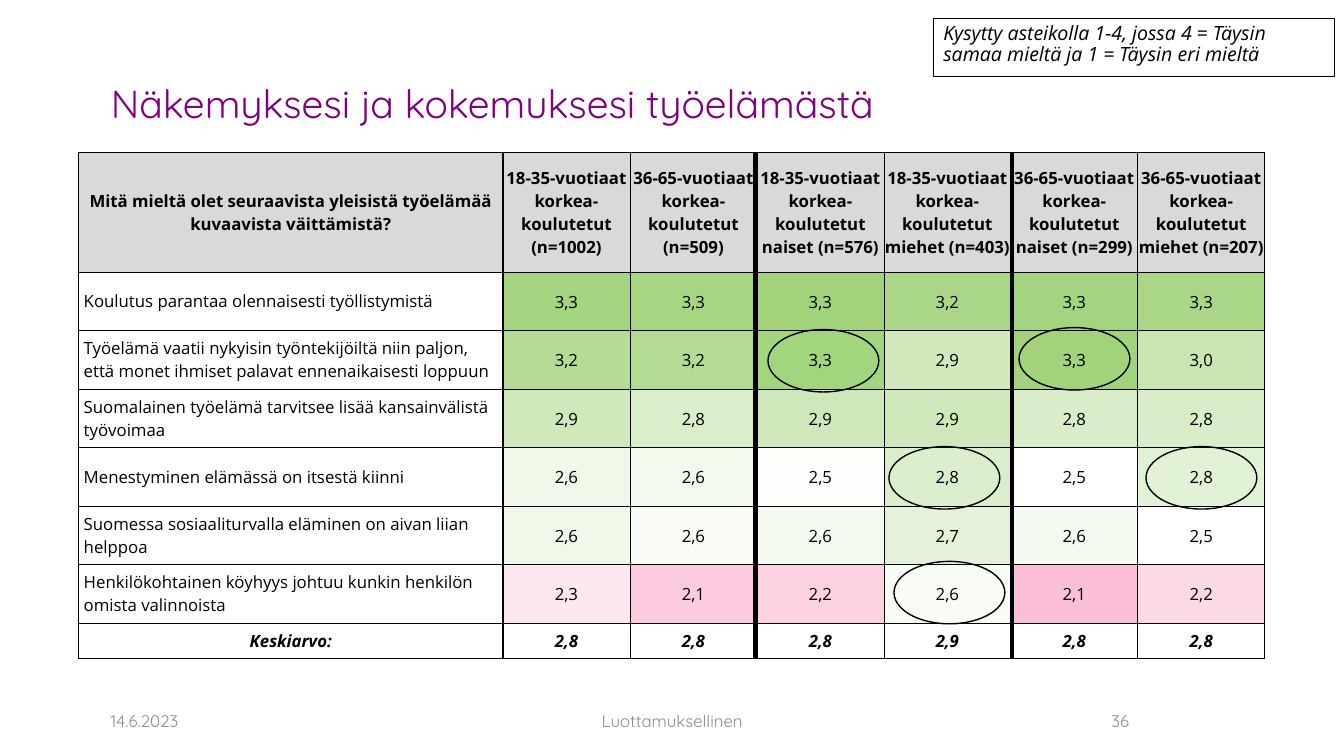
from lxml import etree
from pptx import Presentation
from pptx.dml.color import RGBColor
from pptx.enum.shapes import MSO_CONNECTOR, MSO_SHAPE
from pptx.enum.text import MSO_ANCHOR, PP_ALIGN
from pptx.oxml.ns import qn
from pptx.util import Pt

LEFT, CENTER = PP_ALIGN.LEFT, PP_ALIGN.CENTER
TOP, MIDDLE, BOTTOM = MSO_ANCHOR.TOP, MSO_ANCHOR.MIDDLE, MSO_ANCHOR.BOTTOM
STRAIGHT = MSO_CONNECTOR.STRAIGHT
RECTANGLE, OVAL = MSO_SHAPE.RECTANGLE, MSO_SHAPE.OVAL

# Content
TITLE = "Näkemyksesi ja kokemuksesi työelämästä"
SCALE_NOTE = "Kysytty asteikolla 1-4, jossa 4 = Täysin samaa mieltä ja 1 = Täysin eri mieltä"
QUESTION = "Mitä mieltä olet seuraavista yleisistä työelämää kuvaavista väittämistä?"
GROUPS = [
    "18-35-vuotiaat korkea-koulutetut (n=1002)",
    "36-65-vuotiaat korkea-koulutetut (n=509)",
    "18-35-vuotiaat korkea-koulutetut naiset (n=576)",
    "18-35-vuotiaat korkea-koulutetut miehet (n=403)",
    "36-65-vuotiaat korkea-koulutetut naiset (n=299)",
    "36-65-vuotiaat korkea-koulutetut miehet (n=207)",
]
# Statement, scores by group, heat colours by group
STATEMENTS = [
    ("Koulutus parantaa olennaisesti työllistymistä",
     "3,3 3,3 3,3 3,2 3,3 3,3", "A5D580 A7D683 A2D37B AAD787 A4D47F AAD787"),
    ("Työelämä vaatii nykyisin työntekijöiltä niin paljon, "
     "että monet ihmiset palavat ennenaikaisesti loppuun",
     "3,2 3,2 3,3 2,9 3,3 3,0", "B5DC96 B2DB93 A3D47E D1E9BD A2D37C C9E6B2"),
    ("Suomalainen työelämä tarvitsee lisää kansainvälistä työvoimaa",
     "2,9 2,8 2,9 2,9 2,8 2,8", "CFE9BB DAEECA CFE8BB CFE8BB D9EDC9 D9EDC9"),
    ("Menestyminen elämässä on itsestä kiinni",
     "2,6 2,6 2,5 2,8 2,5 2,8", "F0F8EA F3F9ED FDFEFC DBEECC FEFFFE E2F2D7"),
    ("Suomessa sosiaaliturvalla eläminen on aivan liian helppoa",
     "2,6 2,6 2,6 2,7 2,6 2,5", "F0F8E9 F9FCF6 F6FBF2 E3F2D8 F6FBF1 FFFFFF"),
    ("Henkilökohtainen köyhyys johtuu kunkin henkilön omista valinnoista",
     "2,3 2,1 2,2 2,6 2,1 2,2", "FDE7F0 FCCBDF FCD2E3 F8FCF5 FBC0D8 FCD9E7"),
]
AVERAGES = ["Keskiarvo:"] + "2,8 2,8 2,8 2,9 2,8 2,8".split()
# Text, left, width, alignment
FOOTERS = [
    ("14.6.2023", 72, 200, LEFT),
    ("Luottamuksellinen", 328.3, 303.8, CENTER),
    ("36", 688.3, 223.9, CENTER),
]
HIGHLIGHTS = [(548.6, 235.4), (635, 319), (638.6, 401), (818.6, 319), (727.9, 234)]
DIVIDERS = [539.3, 722.9]

THEME = {
    "title": dict(font="Quicksand", size=28, color="800080"),
    "footer": dict(font="Quicksand", size=12, color="8C8C8C"),
    "note": dict(font="Open Sans", size=14, color="000000", italic=True),
    "header": dict(font="Open Sans", size=12, color="000000", bold=True),
    "body": dict(font="Open Sans", size=12, color="000000"),
    "average": dict(font="Open Sans", size=12, color="000000", bold=True, italic=True),
    "header_fill": "D9D9D9",
    "line": "000000",
}

# Table geometry
TABLE_LEFT, TABLE_TOP = 56.2, 108.7
COLUMNS = [303.1] + [90.7] * len(GROUPS)
ROWS = [85.7] + [41.76] * len(STATEMENTS) + [25.2]


def rgb(value):
    return RGBColor.from_string(value)


def write(frame, text, style, align=LEFT, anchor=MIDDLE, spacing=None):
    frame.word_wrap = True
    frame.vertical_anchor = anchor
    paragraph = frame.paragraphs[0]
    paragraph.alignment = align
    if spacing:
        paragraph.line_spacing = spacing
    run = paragraph.add_run()
    run.text = text
    font = run.font
    font.name, font.size = style["font"], Pt(style["size"])
    font.color.rgb = rgb(style["color"])
    font.bold, font.italic = style.get("bold", False), style.get("italic", False)


def outline(shape, width):
    shape.shadow.inherit = False
    shape.fill.background()
    shape.line.color.rgb = rgb(THEME["line"])
    shape.line.width = Pt(width)


def set_borders(cell, widths):
    properties = cell._tc.get_or_add_tcPr()
    for side, width in zip("LRTB", widths):
        border = etree.SubElement(properties, qn(f"a:ln{side}"), w=str(Pt(width)))
        fill = etree.SubElement(border, qn("a:solidFill"))
        etree.SubElement(fill, qn("a:srgbClr"), val=THEME["line"])


def fill_cell(cell, column, text, style, color=None, is_statement=False):
    side, top = (3.6, 0) if is_statement else (0.72, 0.72)
    cell.margin_left = cell.margin_right = Pt(side)
    cell.margin_top, cell.margin_bottom = Pt(top), 0
    cell.vertical_anchor = MIDDLE
    # Heavier lines fall between the pairs of columns
    set_borders(cell, (1 if column % 2 else 0.5,
                       1 if column % 2 == 0 and column < len(GROUPS) else 0.5, 0.5, 0.5))
    if color:
        cell.fill.solid()
        cell.fill.fore_color.rgb = rgb(color)
    else:
        cell.fill.background()
    write(cell.text_frame, text, style, LEFT if is_statement else CENTER)


def add_scores(slide):
    table = slide.shapes.add_table(
        len(ROWS), len(COLUMNS), Pt(TABLE_LEFT), Pt(TABLE_TOP),
        Pt(sum(COLUMNS)), Pt(sum(ROWS))).table
    table.first_row = table.horz_banding = False
    for column, width in zip(table.columns, COLUMNS):
        column.width = Pt(width)
    for row, height in zip(table.rows, ROWS):
        row.height = Pt(height)

    for column, heading in enumerate([QUESTION] + GROUPS):
        fill_cell(table.cell(0, column), column, heading, THEME["header"], THEME["header_fill"])
    for row, (statement, scores, colors) in enumerate(STATEMENTS, 1):
        texts = [statement] + scores.split()
        for column, (text, color) in enumerate(zip(texts, [None] + colors.split())):
            fill_cell(table.cell(row, column), column, text, THEME["body"], color, column == 0)
    for column, average in enumerate(AVERAGES):
        fill_cell(table.cell(len(ROWS) - 1, column), column, average, THEME["average"])


def main():
    deck = Presentation()
    deck.slide_width, deck.slide_height = Pt(960), Pt(540)
    slide = deck.slides.add_slide(deck.slide_layouts[5])
    shapes = slide.shapes

    # Title
    title = shapes.title
    title.left, title.top, title.width, title.height = Pt(72), Pt(16.6), Pt(840), Pt(77.8)
    write(title.text_frame, TITLE, THEME["title"], anchor=BOTTOM, spacing=0.9)

    # Score table
    add_scores(slide)

    # Footer
    for text, left, width, align in FOOTERS:
        footer = shapes.add_textbox(Pt(left), Pt(500.4), Pt(width), Pt(28.8))
        write(footer.text_frame, text, THEME["footer"], align)

    # Scale note
    note = shapes.add_shape(RECTANGLE, Pt(666.7), Pt(13), Pt(286.6), Pt(41.4))
    outline(note, 0.75)
    write(note.text_frame, SCALE_NOTE, THEME["note"], anchor=TOP, spacing=0.9)

    # Group dividers
    for x in DIVIDERS:
        divider = shapes.add_connector(
            STRAIGHT, Pt(x), Pt(TABLE_TOP), Pt(x), Pt(TABLE_TOP + sum(ROWS)))
        divider.line.color.rgb = rgb(THEME["line"])
        divider.line.width = Pt(2.25)
        etree.SubElement(divider._element.spPr, qn("a:effectLst"))

    # Highlighted scores
    for left, top in HIGHLIGHTS:
        outline(shapes.add_shape(OVAL, Pt(left), Pt(top), Pt(79.2), Pt(44.6)), 1)

    deck.save("out.pptx")


if __name__ == "__main__":
    main()
